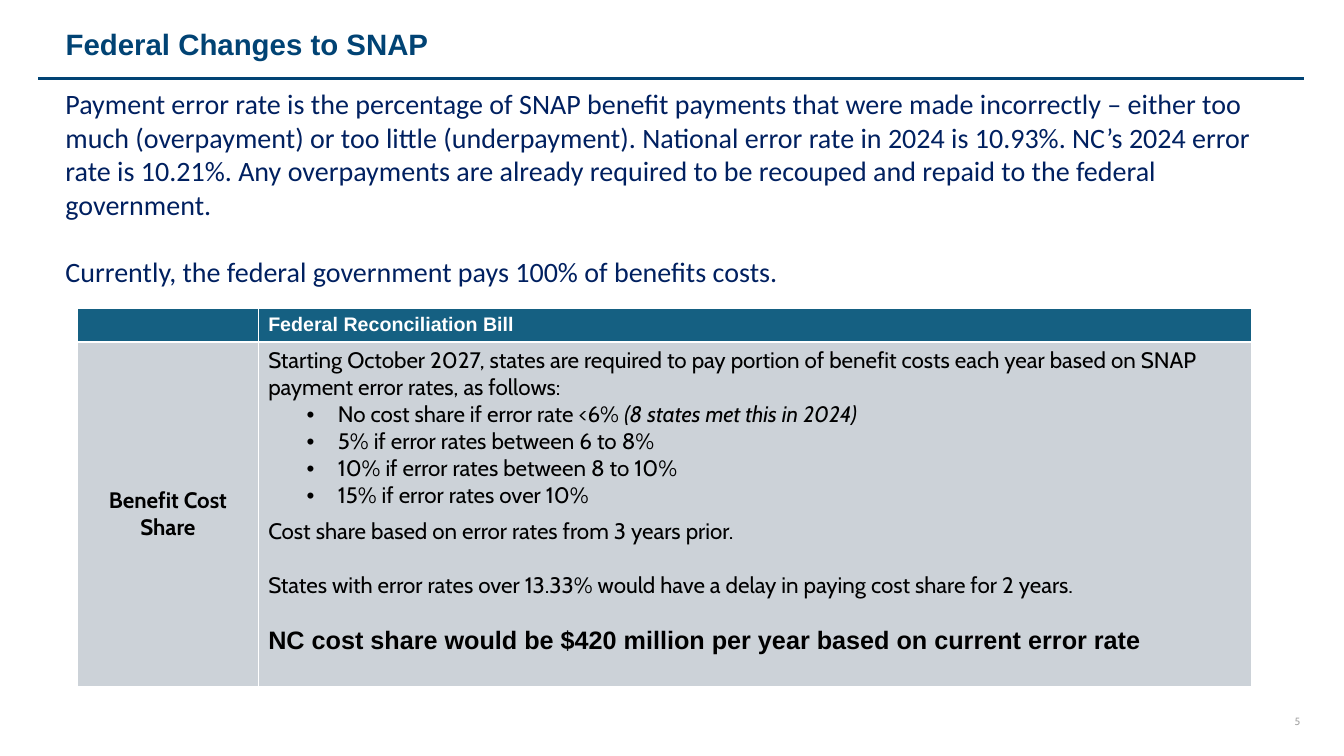
"""Build the slide on federal changes to SNAP."""
from dataclasses import dataclass
from lxml.etree import SubElement
from pptx import Presentation
from pptx.dml.color import RGBColor
from pptx.enum.text import MSO_ANCHOR, MSO_AUTO_SIZE, PP_ALIGN
from pptx.oxml.ns import qn
from pptx.util import Inches, Pt


@dataclass(frozen=True)
class Theme:
    blue: str = "014374"
    navy: str = "002060"
    teal: str = "156082"
    pale: str = "CCD2D8"
    white: str = "FFFFFF"
    black: str = "000000"
    grey: str = "A6A6A6"
    sans: str = "Arial"
    body: str = "Calibri"
    cell: str = "Cabin"
    title: float = 21
    intro: float = 20
    key: float = 18
    text: float = 16
    head: float = 14
    page: float = 7.5


theme = Theme()
deck = Presentation()
deck.slide_width, deck.slide_height = Inches(13.33), Inches(7.5)
col, row = deck.slide_width / 100, deck.slide_height / 100
slide = deck.slides.add_slide(deck.slide_layouts[5])
shapes = slide.shapes


def area(left, top, wide, high):
    return int(left * col), int(top * row), int(wide * col), int(high * row)


def write(para, text, size, font, color, bold=False, slant=False):
    run = para.add_run()
    run.text = text
    run.font.size, run.font.name = Pt(size), font
    run.font.bold, run.font.italic = bold, slant
    run.font.color.rgb = RGBColor.from_string(color)


title = shapes.title
title.left, title.top, title.width, title.height = area(4.13, 3.73, 75.17, 8.67)
frame = title.text_frame
frame.auto_size = MSO_AUTO_SIZE.NONE
frame.vertical_anchor = MSO_ANCHOR.TOP
frame.margin_top = Pt(1.5)
para = frame.paragraphs[0]
para.alignment, para.line_spacing = PP_ALIGN.LEFT, 0.9
write(para, "Federal Changes to SNAP", theme.title, theme.sans, theme.blue, True)

left, top, wide, high = area(2.85, 10.4, 94.15, 0)
rule = shapes.add_connector(1, left, top, left + wide, top)
rule.line.color.rgb = RGBColor.from_string(theme.blue)
rule.line.width = Pt(2.25)
SubElement(rule.element.spPr, qn("a:effectLst"))

intro = (
    ("Payment error rate is the percentage of SNAP benefit payments that were made "
     "incorrectly – either too much (overpayment) or too little (underpayment). "
     "National error rate in 2024 is 10.93%. NC’s 2024 error rate is 10.21%. Any "
     "overpayments are already required to be recouped and repaid to the federal "
     "government.", 0),
    ("Currently, the federal government pays 100% of benefits costs.", 24),
)
frame = shapes.add_textbox(*area(4.13, 10.8, 91.82, 28.27)).text_frame
frame.word_wrap = True
for spot, (text, gap) in enumerate(intro):
    para = frame.add_paragraph() if spot else frame.paragraphs[0]
    para.space_before = Pt(gap)
    write(para, text, theme.intro, theme.body, theme.navy)

table = shapes.add_table(2, 2, *area(5.78, 40.8, 87.32, 50)).table
for part, share in zip(table.columns, (13.43, 73.89)):
    part.width = int(share * col)
for part, share, fill in zip(table.rows, (4.4, 45.6), (theme.teal, theme.pale)):
    part.height = int(share * row)
    for cell in part.cells:
        props = cell._tc.get_or_add_tcPr()
        for side in "LRTB":
            edge = SubElement(props, qn(f"a:ln{side}"), w=str(Pt(1)))
            paint = SubElement(edge, qn("a:solidFill"))
            SubElement(paint, qn("a:srgbClr"), val=theme.white)
        cell.fill.solid()
        cell.fill.fore_color.rgb = RGBColor.from_string(fill)

blank = table.cell(0, 0)
blank.margin_top = blank.margin_bottom = 0
write(table.cell(0, 1).text_frame.paragraphs[0], "Federal Reconciliation Bill",
      theme.head, theme.sans, theme.white, True)

label = table.cell(1, 0)
label.vertical_anchor = MSO_ANCHOR.MIDDLE
para = label.text_frame.paragraphs[0]
para.alignment = PP_ALIGN.CENTER
write(para, "Benefit Cost Share", theme.text, theme.cell, theme.black, True)

plain = (theme.text, theme.cell, theme.black)
strong = (theme.key, theme.sans, theme.black, True)
terms = (
    ("Starting October 2027, states are required to pay portion of benefit costs each "
     "year based on SNAP payment error rates, as follows:", "", 0, False, plain),
    ("No cost share if error rate <6% ", "(8 states met this in 2024)", 0, True, plain),
    ("5% if error rates between 6 to 8%", "", 0, True, plain),
    ("10% if error rates between 8 to 10%", "", 0, True, plain),
    ("15% if error rates over 10%", "", 0, True, plain),
    ("Cost share based on error rates from 3 years prior.", "", 6.2, False, plain),
    ("States with error rates over 13.33% would have a delay in paying cost share "
     "for 2 years.", "", 19.4, False, plain),
    ("NC cost share would be $420 million per year based on current error rate",
     "", 19.4, False, strong),
)
frame = table.cell(1, 1).text_frame
for spot, (text, aside, gap, dot, style) in enumerate(terms):
    para = frame.add_paragraph() if spot else frame.paragraphs[0]
    para.space_before = Pt(gap)
    write(para, text, *style)
    if aside:
        write(para, aside, *style, slant=True)
    if dot:
        para.level = 1
        props = para._p.get_or_add_pPr()
        props.set("marL", str(int(5.18 * col)))
        props.set("indent", str(int(-2.33 * col)))
        SubElement(props, qn("a:buFont"), typeface=theme.sans)
        SubElement(props, qn("a:buChar"), char="•")

frame = shapes.add_textbox(*area(94.82, 94.53, 3.45, 1.73)).text_frame
frame.margin_left = frame.margin_right = frame.margin_top = frame.margin_bottom = 0
frame.word_wrap = True
frame.vertical_anchor = MSO_ANCHOR.MIDDLE
para = frame.paragraphs[0]
para.alignment = PP_ALIGN.CENTER
write(para, "5", theme.page, theme.cell, theme.grey)

deck.save("out.pptx")
